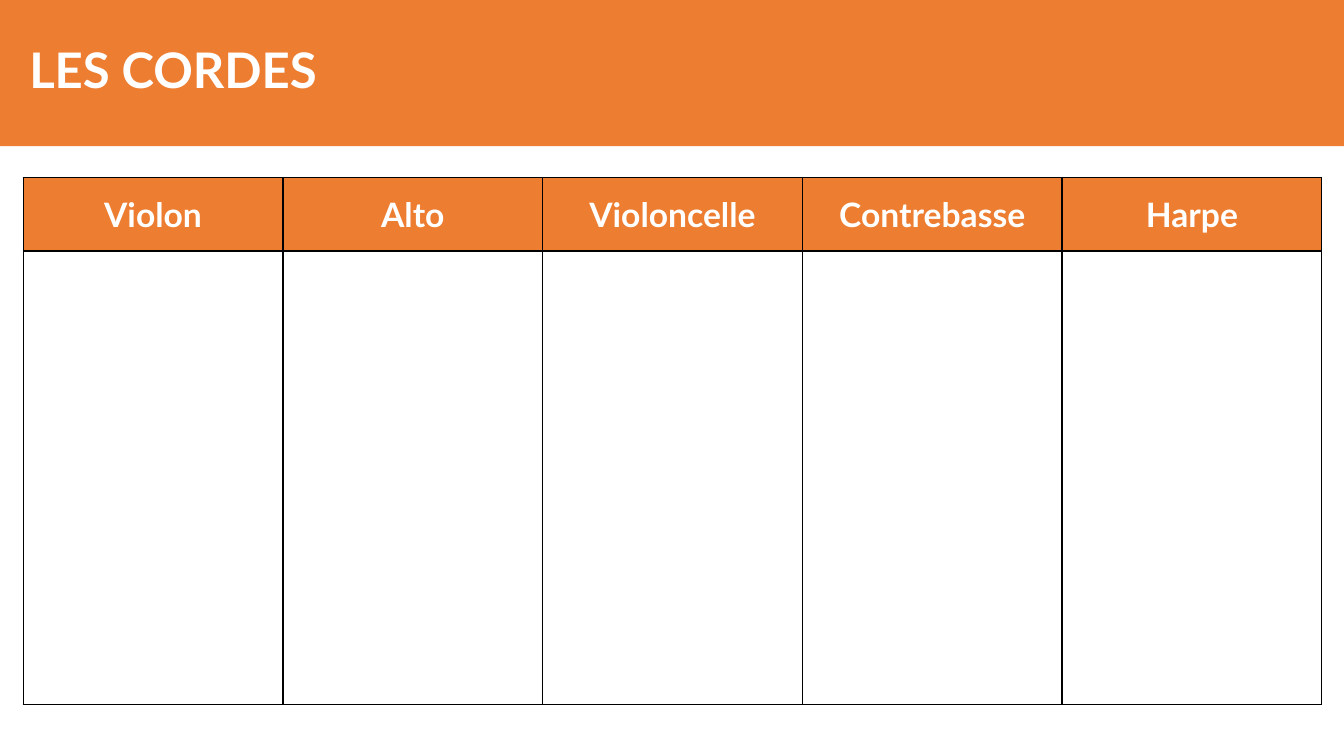
from lxml import etree
from pptx import Presentation
from pptx.dml.color import RGBColor
from pptx.enum.text import MSO_ANCHOR, MSO_AUTO_SIZE, PP_ALIGN
from pptx.oxml.ns import qn
from pptx.util import Inches, Pt

MIDDLE = MSO_ANCHOR.MIDDLE
NO_AUTOFIT = MSO_AUTO_SIZE.NONE
LEFT = PP_ALIGN.LEFT
CENTER = PP_ALIGN.CENTER

TITLE_ONLY = 5
FONT = "Lato"
ORANGE = "ED7D31"
WHITE = "FFFFFF"
BLACK = "000000"
INSTRUMENTS = ["Violon", "Alto", "Violoncelle", "Contrebasse", "Harpe"]


def color(value):
    return RGBColor.from_string(value)


def fill_solid(target, value):
    target.fill.solid()
    target.fill.fore_color.rgb = color(value)


def add_text(paragraph, text, size, alignment):
    paragraph.alignment = alignment
    run = paragraph.add_run()
    run.text = text
    run.font.name = FONT
    run.font.size = Pt(size)
    run.font.bold = True
    run.font.color.rgb = color(WHITE)


def set_borders(cell, value, width):
    properties = cell._tc.get_or_add_tcPr()
    for position, side in enumerate(("a:lnL", "a:lnR", "a:lnT", "a:lnB")):
        line = etree.Element(qn(side), w=str(Pt(width)))
        fill = etree.SubElement(line, qn("a:solidFill"))
        etree.SubElement(fill, qn("a:srgbClr"), val=value)
        properties.insert(position, line)


def build_title(slide, left, top, width, height):
    title = slide.shapes.title
    title.left, title.top = Inches(left), Inches(top)
    title.width, title.height = Inches(width), Inches(height)
    fill_solid(title, ORANGE)
    frame = title.text_frame
    frame.auto_size = NO_AUTOFIT
    frame.word_wrap = True
    frame.vertical_anchor = MIDDLE
    frame.margin_left = Inches(0.29)
    paragraph = frame.paragraphs[0]
    paragraph.line_spacing = 0.9
    add_text(paragraph, "LES CORDES", 35, LEFT)


def build_instrument_table(slide, left, top, width, height):
    header_height = 0.73
    shape = slide.shapes.add_table(
        2, len(INSTRUMENTS), Inches(left), Inches(top), Inches(width), Inches(height)
    )
    table = shape.table
    table.rows[0].height = Inches(header_height)
    table.rows[1].height = Inches(height - header_height)
    for index, instrument in enumerate(INSTRUMENTS):
        table.columns[index].width = Inches(width / len(INSTRUMENTS))
        header, body = table.cell(0, index), table.cell(1, index)
        for cell, background in ((header, ORANGE), (body, WHITE)):
            fill_solid(cell, background)
            set_borders(cell, BLACK, 1)
        header.vertical_anchor = MIDDLE
        add_text(header.text_frame.paragraphs[0], instrument, 24, CENTER)


def main():
    presentation = Presentation()
    presentation.slide_width = Inches(13.33)
    presentation.slide_height = Inches(7.5)
    slide = presentation.slides.add_slide(presentation.slide_layouts[TITLE_ONLY])
    build_title(slide, 0, 0, 13.33, 1.45)
    build_instrument_table(slide, 0.23, 1.76, 12.88, 5.23)
    presentation.save("out.pptx")


if __name__ == "__main__":
    main()
